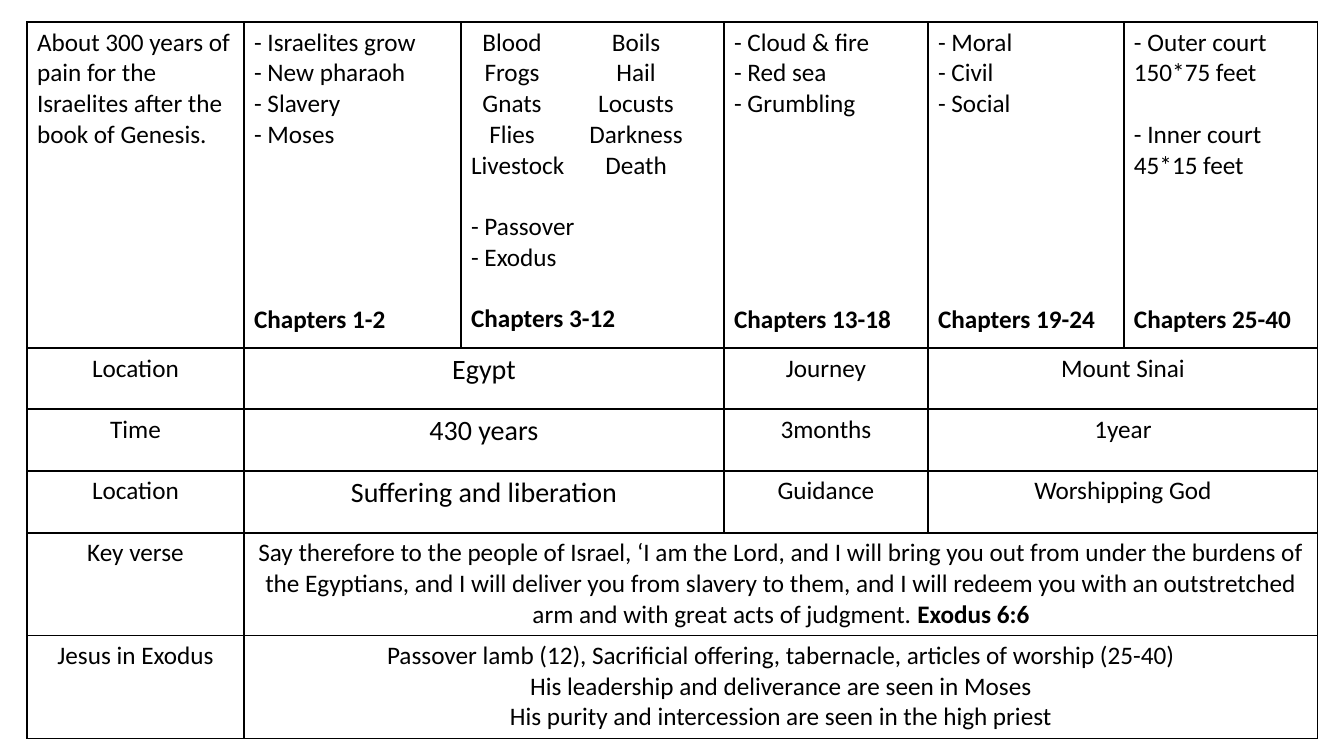
from lxml import etree
from pptx import Presentation
from pptx import util as u
from pptx.dml.color import RGBColor
from pptx.enum import text
from pptx.oxml.ns import qn

PX = 9071.43  # EMU in one px
COLORS = {"ink": "000000", "border": "000000"}
FONT = "Calibri"
LINE_PT = 22  # height of one 18 pt line
CHAPTER_LINE = 9  # lines above the chapter reference

COL_WIDTHS = [217, 217, 263, 204, 196, 194]
ROW_HEIGHTS = [326, 61, 62, 62, 102, 103]
PLAGUE_TABS = [41, 165]

INTRO = "About 300 years of pain for the Israelites after the book of Genesis."
# None leaves one line free
TOPICS = [
    (["- Israelites grow", "- New pharaoh", "- Slavery", "- Moses"], "Chapters 1-2"),
    (["\tBlood\tBoils", "\tFrogs\tHail", "\tGnats\tLocusts", "\tFlies\tDarkness",
      "Livestock\tDeath", None, "- Passover", "- Exodus"], "Chapters 3-12"),
    (["- Cloud & fire", "- Red sea", "- Grumbling"], "Chapters 13-18"),
    (["- Moral", "- Civil", "- Social"], "Chapters 19-24"),
    (["- Outer court", "150*75 feet", None, "- Inner court", "45*15 feet"],
     "Chapters 25-40"),
]
SUMMARY = [
    ("Location", "Egypt", "Journey", "Mount Sinai"),
    ("Time", "430 years", "3months", "1year"),
    ("Location", "Suffering and liberation", "Guidance", "Worshipping God"),
]
SUMMARY_SPANS = [(0, 0, 18), (1, 2, 20), (3, 3, 18), (4, 5, 18)]  # first, last, size
VERSE = ("Say therefore to the people of Israel, ‘I am the Lord, and I will bring you "
         "out from under the burdens of the Egyptians, and I will deliver you from "
         "slavery to them, and I will redeem you with an outstretched arm and with "
         "great acts of judgment. ")
JESUS = [
    "Passover lamb (12), Sacrificial offering, tabernacle, articles of worship (25-40)",
    "His leadership and deliverance are seen in Moses",
    "His purity and intercession are seen in the high priest",
]


def px(n):
    return u.Emu(round(n * PX))


def add_run(p, words, size=18, bold=False):
    r = p.add_run()
    r.text = words
    for name, value in {"name": FONT, "size": u.Pt(size), "bold": bold}.items():
        setattr(r.font, name, value)
    r.font.color.rgb = RGBColor.from_string(COLORS["ink"])


def next_paragraph(tf):
    """Return the first paragraph while it is empty, else a new one."""
    p = tf.paragraphs[-1]
    return tf.add_paragraph() if p.runs else p


def add_tabs(p, stops):
    tabs = etree.SubElement(p._p.get_or_add_pPr(), qn("a:tabLst"))
    for stop in stops:
        etree.SubElement(tabs, qn("a:tab"), pos=str(px(stop)), algn="ctr")


def fill_topic(cell, lines, chapters):
    """Write the lines, then the bold chapter reference on the last line."""
    gap = 0
    for line in lines:
        if line is None:
            gap += 1
            continue
        p = next_paragraph(cell.text_frame)
        if gap:
            p.space_before = u.Pt(gap * LINE_PT)
            gap = 0
        if "\t" in line:
            add_tabs(p, PLAGUE_TABS)
        add_run(p, line)
    p = next_paragraph(cell.text_frame)
    p.space_before = u.Pt((CHAPTER_LINE - len(lines)) * LINE_PT)
    add_run(p, chapters, bold=True)


def fill_centred(table, row, first, last, lines, size=18):
    """Merge columns first to last of a row and centre the lines in them."""
    cell = table.cell(row, first)
    if last > first:
        cell.merge(table.cell(row, last))
    for line in lines:
        p = next_paragraph(cell.text_frame)
        p.alignment = text.PP_ALIGN.CENTER
        add_run(p, line, size)
    return p


def add_borders(cell):
    tcPr = cell._tc.get_or_add_tcPr()
    for i, side in enumerate(("lnL", "lnR", "lnT", "lnB")):
        ln = etree.Element(qn(f"a:{side}"), w=str(u.Pt(1)))
        fill = etree.SubElement(ln, qn("a:solidFill"))
        etree.SubElement(fill, qn("a:srgbClr"), val=COLORS["border"])
        tcPr.insert(i, ln)


def add_grid(s):
    table = s.shapes.add_table(len(ROW_HEIGHTS), len(COL_WIDTHS), px(27), px(22),
                               px(sum(COL_WIDTHS)), px(sum(ROW_HEIGHTS))).table
    table.first_row = table.horz_banding = False
    for col, width in zip(table.columns, COL_WIDTHS):
        col.width = px(width)
    for row, height in zip(table.rows, ROW_HEIGHTS):
        row.height = px(height)
    for cell in table.iter_cells():
        cell.fill.background()
        add_borders(cell)
    return table


def main():
    prs = Presentation()
    prs.slide_width, prs.slide_height = px(1344), px(756)
    s = prs.slides.add_slide(prs.slide_layouts[6])
    table = add_grid(s)

    add_run(table.cell(0, 0).text_frame.paragraphs[0], INTRO)
    for col, (lines, chapters) in enumerate(TOPICS, 1):
        fill_topic(table.cell(0, col), lines, chapters)
    for row, entries in enumerate(SUMMARY, 1):
        for entry, (first, last, size) in zip(entries, SUMMARY_SPANS):
            fill_centred(table, row, first, last, [entry], size)

    fill_centred(table, 4, 0, 0, ["Key verse"])
    verse = fill_centred(table, 4, 1, 5, [VERSE])
    add_run(verse, "Exodus 6:6", bold=True)
    fill_centred(table, 5, 0, 0, ["Jesus in Exodus"])
    fill_centred(table, 5, 1, 5, JESUS)

    prs.save("out.pptx")


if __name__ == "__main__":
    main()
